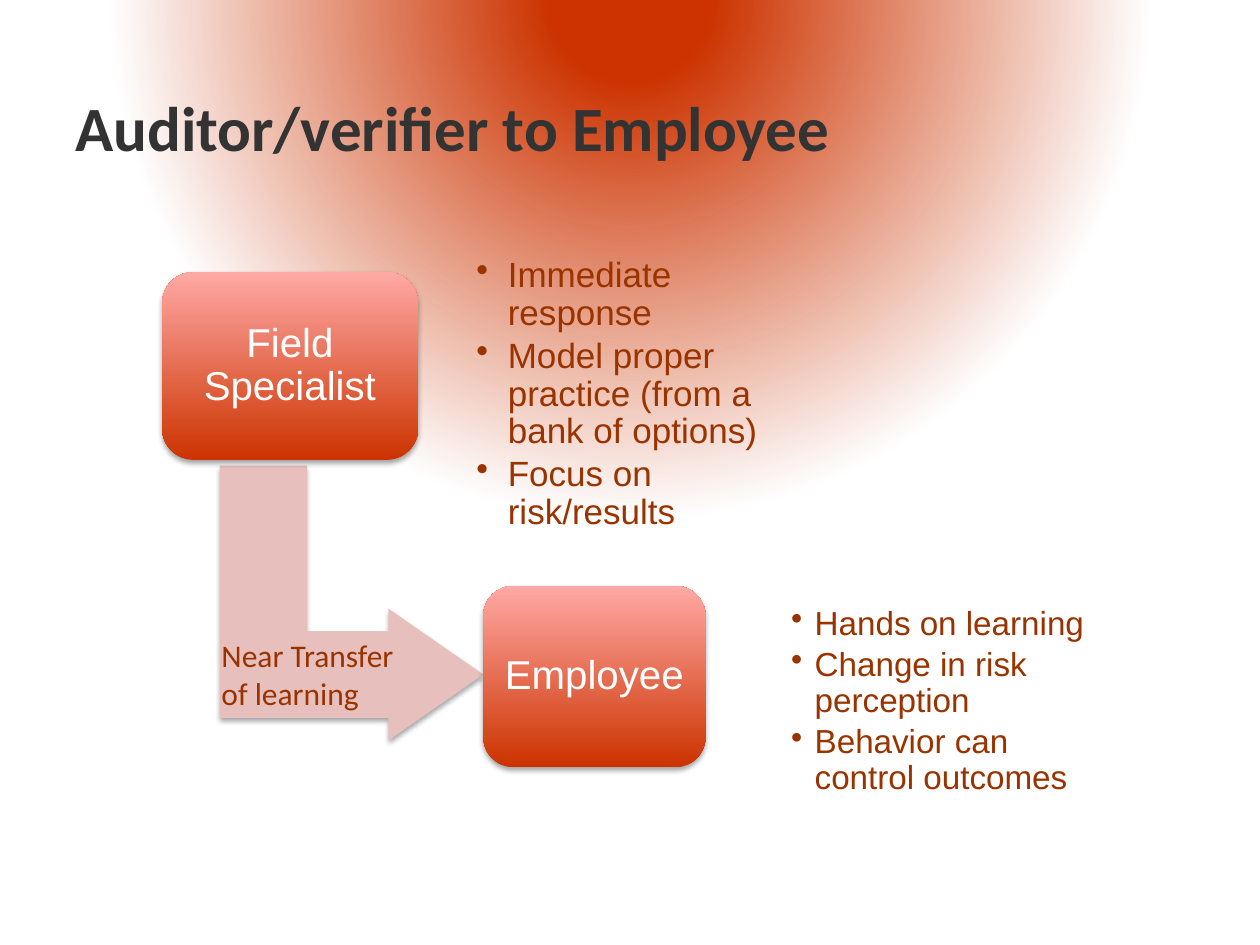
from pptx import Presentation
from pptx.dml.color import RGBColor
from pptx.enum.shapes import MSO_SHAPE
from pptx.enum.text import MSO_ANCHOR, PP_ALIGN
from pptx.oxml import parse_xml
from pptx.oxml.ns import nsdecls, qn
from pptx.util import Pt

ROUNDED = MSO_SHAPE.ROUNDED_RECTANGLE
BENT_ARROW = MSO_SHAPE.BENT_UP_ARROW
TOP, MIDDLE = MSO_ANCHOR.TOP, MSO_ANCHOR.MIDDLE
LEFT, CENTER = PP_ALIGN.LEFT, PP_ALIGN.CENTER

RED, PINK, PALE = "CC3300", "FFA9A5", "E7BFBD"
RUST, DARK, WHITE = "993300", "333333", "FFFFFF"


def color(value):
    return RGBColor.from_string(value)


def set_text(frame, text, size, ink, font="Arial", bold=False, align=LEFT,
             anchor=TOP, wrap=True, inset=None, spacing=None, after=0, hang=None):
    """Write one paragraph per line of text; hang gives bullets that indent."""
    frame.word_wrap = wrap
    frame.vertical_anchor = anchor
    if inset is not None:
        frame.margin_left = frame.margin_right = Pt(inset)
        frame.margin_top = frame.margin_bottom = Pt(inset)
    for number, line in enumerate(text.split("\n")):
        paragraph = frame.add_paragraph() if number else frame.paragraphs[0]
        paragraph.alignment = align
        paragraph.space_after = Pt(after)
        if spacing:
            paragraph.line_spacing = spacing
        if hang:
            properties = paragraph._p.get_or_add_pPr()
            properties.set("marL", str(Pt(hang)))
            properties.set("indent", str(-Pt(hang)))
            properties.append(parse_xml(f'<a:buChar {nsdecls("a")} char="•"/>'))
        run = paragraph.add_run()
        run.text = line
        run.font.name, run.font.size, run.font.bold = font, Pt(size), bold
        run.font.color.rgb = color(ink)


def add_text(slide, box, text, **style):
    area = slide.shapes.add_textbox(*map(Pt, box))
    set_text(area.text_frame, text, **style)


def add_soft_shadow(shape):
    shape.shadow.inherit = False
    effects = shape._element.spPr.find(qn("a:effectLst"))
    effects.append(parse_xml(
        f'<a:outerShdw {nsdecls("a")} blurRad="{Pt(3.1)}" dist="{Pt(1.8)}" '
        'dir="5400000" rotWithShape="0"><a:srgbClr val="000000">'
        '<a:alpha val="35000"/></a:srgbClr></a:outerShdw>'))


def paint_background(slide):
    """Fill the slide with a red glow centred above its top edge."""
    slide.background.fill.gradient()
    gradient = slide.element.find(".//" + qn("a:gradFill"))
    stops = "".join(
        f'<a:gs pos="{percent * 1000}"><a:srgbClr val="{tone}"/></a:gs>'
        for percent, tone in ((10, RED), (66, "FEFEFE"), (100, WHITE)))
    glow = parse_xml(
        f'<a:gradFill {nsdecls("a")} rotWithShape="0"><a:gsLst>{stops}</a:gsLst>'
        '<a:path path="circle"><a:fillToRect l="50000" t="-80000" r="50000" '
        'b="180000"/></a:path></a:gradFill>')
    gradient.getparent().replace(gradient, glow)


def add_role(slide, box, role):
    card = slide.shapes.add_shape(ROUNDED, *map(Pt, box))
    card.fill.gradient()
    card.fill.gradient_angle = 90
    for stop, position, tone in zip(card.fill.gradient_stops, (0, 1), (RED, PINK)):
        stop.position = position
        stop.color.rgb = color(tone)
    card.line.fill.background()
    add_soft_shadow(card)
    set_text(card.text_frame, role, size=23, ink=WHITE, align=CENTER,
             anchor=MIDDLE, inset=7.2, spacing=0.9)


def add_transfer_arrow(slide, box):
    arrow = slide.shapes.add_shape(BENT_ARROW, *map(Pt, box))
    arrow.rotation = 90
    for index, value in enumerate((0.33, 0.25, 0.36)):
        arrow.adjustments[index] = value
    arrow.fill.solid()
    arrow.fill.fore_color.rgb = color(PALE)
    arrow.line.fill.background()
    add_soft_shadow(arrow)


def add_bullets(slide, box, points, size, hang, inset):
    add_text(slide, box, points, size=size, ink=RUST, anchor=MIDDLE,
             inset=inset, spacing=0.9, after=3, hang=hang)


def main():
    deck = Presentation()
    deck.slide_width, deck.slide_height = Pt(720), Pt(540)
    slide = deck.slides.add_slide(deck.slide_layouts[6])
    paint_background(slide)
    add_text(slide, (36, 36, 528, 72), "Auditor/verifier to Employee",
             size=36, ink=DARK, font="Calibri", bold=True, anchor=MIDDLE)
    add_transfer_arrow(slide, (122.4, 269.3, 157, 150.5))
    add_role(slide, (92.7, 155.5, 146.2, 107.3), "Field Specialist")
    add_bullets(slide, (266.4, 147, 192.2, 157),
                "Immediate response\n"
                "Model proper practice (from a bank of options)\n"
                "Focus on risk/results", size=20, hang=18, inset=5.8)
    add_role(slide, (276.2, 334.8, 127, 103.7), "Employee")
    add_bullets(slide, (445, 326.2, 192.2, 149.8),
                "Hands on learning\n"
                "Change in risk perception\n"
                "Behavior can control outcomes", size=19, hang=13.5, inset=7.2)
    add_text(slide, (119.5, 360, 116, 51), "Near Transfer\nof learning",
             size=18, ink=RUST, font="Calibri", wrap=False)
    deck.save("out.pptx")


if __name__ == "__main__":
    main()
